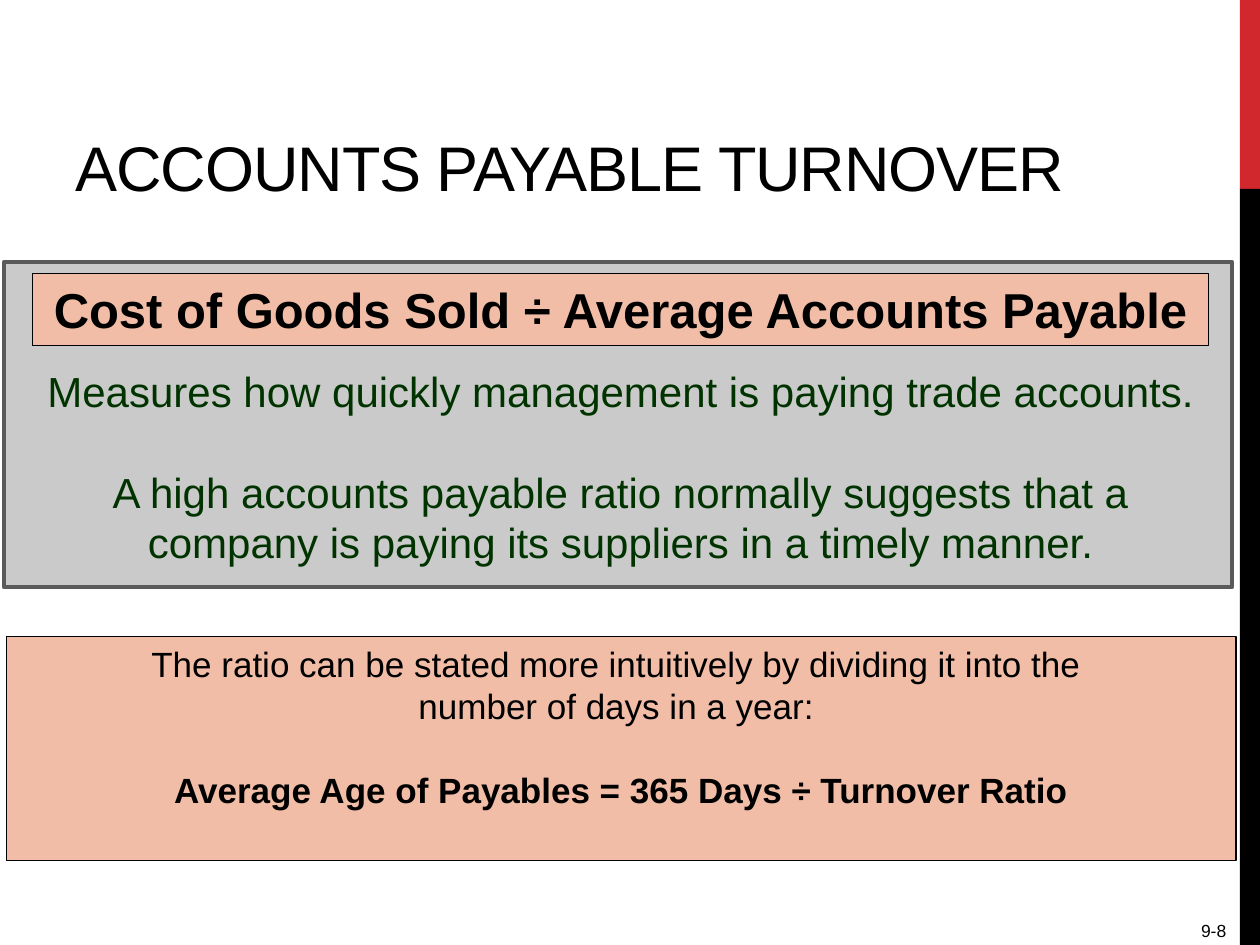
from pptx import Presentation
from pptx.dml.color import RGBColor
from pptx.enum.shapes import MSO_SHAPE
from pptx.enum.text import MSO_ANCHOR, PP_ALIGN
from pptx.util import Inches, Pt

RECT = MSO_SHAPE.RECTANGLE
LEFT, CENTER, RIGHT = PP_ALIGN.LEFT, PP_ALIGN.CENTER, PP_ALIGN.RIGHT
TOP, BOTTOM = MSO_ANCHOR.TOP, MSO_ANCHOR.BOTTOM

BLACK = RGBColor(0x00, 0x00, 0x00)
RED = RGBColor(0xD1, 0x28, 0x2E)
GRAY = RGBColor(0xCA, 0xCA, 0xCA)
DARK_GRAY = RGBColor(0x5A, 0x5A, 0x5A)
PEACH = RGBColor(0xF1, 0xBD, 0xA7)
GREEN = RGBColor(0x00, 0x33, 0x00)

COLS, ROWS = 100, 75  # grid cells across and down the slide


class Deck:
    """Holds the style and the current slide."""
    font = "Arial"
    leading = 1.2

    def __init__(self):
        self.prs = Presentation()
        self.prs.slide_width, self.prs.slide_height = Inches(10), Inches(7.5)
        self.s = self.prs.slides.add_slide(self.prs.slide_layouts[6])

    def cells(self, col, row, cols, rows):
        dx, dy = self.prs.slide_width / COLS, self.prs.slide_height / ROWS
        return [round(v) for v in (col * dx, row * dy, cols * dx, rows * dy)]

    def box(self, at, fill, line=None, width=0.75):
        sp = self.s.shapes.add_shape(RECT, *self.cells(*at))
        sp.shadow.inherit = False
        sp.fill.solid()
        sp.fill.fore_color.rgb = fill
        if line is None:
            sp.line.fill.background()
        else:
            sp.line.color.rgb = line
            sp.line.width = Pt(width)
        return sp

    def label(self, at):
        return self.s.shapes.add_textbox(*self.cells(*at))

    def add_text(self, sp, lines, size, color=BLACK, align=CENTER, anchor=TOP, spacing=0):
        """Each line is (text, bold, blank lines of space before it)."""
        tf = sp.text_frame
        tf.word_wrap = True
        tf.vertical_anchor = anchor
        for i, (text, bold, gap) in enumerate(lines):
            p = tf.add_paragraph() if i else tf.paragraphs[0]
            p.alignment = align
            p.line_spacing = Pt(size * self.leading)
            p.space_before = Pt(size * self.leading * gap)
            r = p.add_run()
            r.text = text
            r.font.name, r.font.size, r.font.bold = self.font, Pt(size), bold
            r.font.color.rgb = color
            if spacing:
                r._r.get_or_add_rPr().set("spc", str(round(spacing * 100)))


def main():
    d = Deck()

    # Side bar and slide number
    d.box((98.4, 0, 1.6, 15), RED)
    d.box((98.4, 15, 1.6, 60), BLACK)
    d.add_text(d.label((87.5, 72.5, 10.8, 2.7)), [("9-8", False, 0)], 10, align=RIGHT)

    # Title
    d.add_text(d.label((5, 1.7, 91.7, 15)), [("ACCOUNTS PAYABLE TURNOVER", False, 0)],
               36, align=LEFT, anchor=BOTTOM, spacing=-0.6)

    # Ratio panel: formula and meaning
    d.box((0.3, 20.8, 97.5, 25.8), GRAY, DARK_GRAY, 2.25)
    formula = d.box((2.6, 21.7, 93.3, 5.7), PEACH, BLACK)
    d.add_text(formula, [("Cost of Goods Sold ÷ Average Accounts Payable", True, 0)], 28)
    d.add_text(d.label((2.6, 28.5, 93.3, 17.2)), [
        ("Measures how quickly management is paying trade accounts. ", False, 0),
        ("A high accounts payable ratio normally suggests that a company "
         "is paying its suppliers in a timely manner.", False, 1),
    ], 24, GREEN)

    # Average age panel
    age = d.box((0.5, 50.5, 97.6, 17.8), PEACH, BLACK)
    d.add_text(age, [
        ("The ratio can be stated more intuitively by dividing it into the ", False, 0),
        ("number of days in a year: ", False, 0),
        ("Average Age of Payables = 365 Days ÷ Turnover Ratio", True, 1),
    ], 20)

    d.prs.save("out.pptx")


if __name__ == "__main__":
    main()
